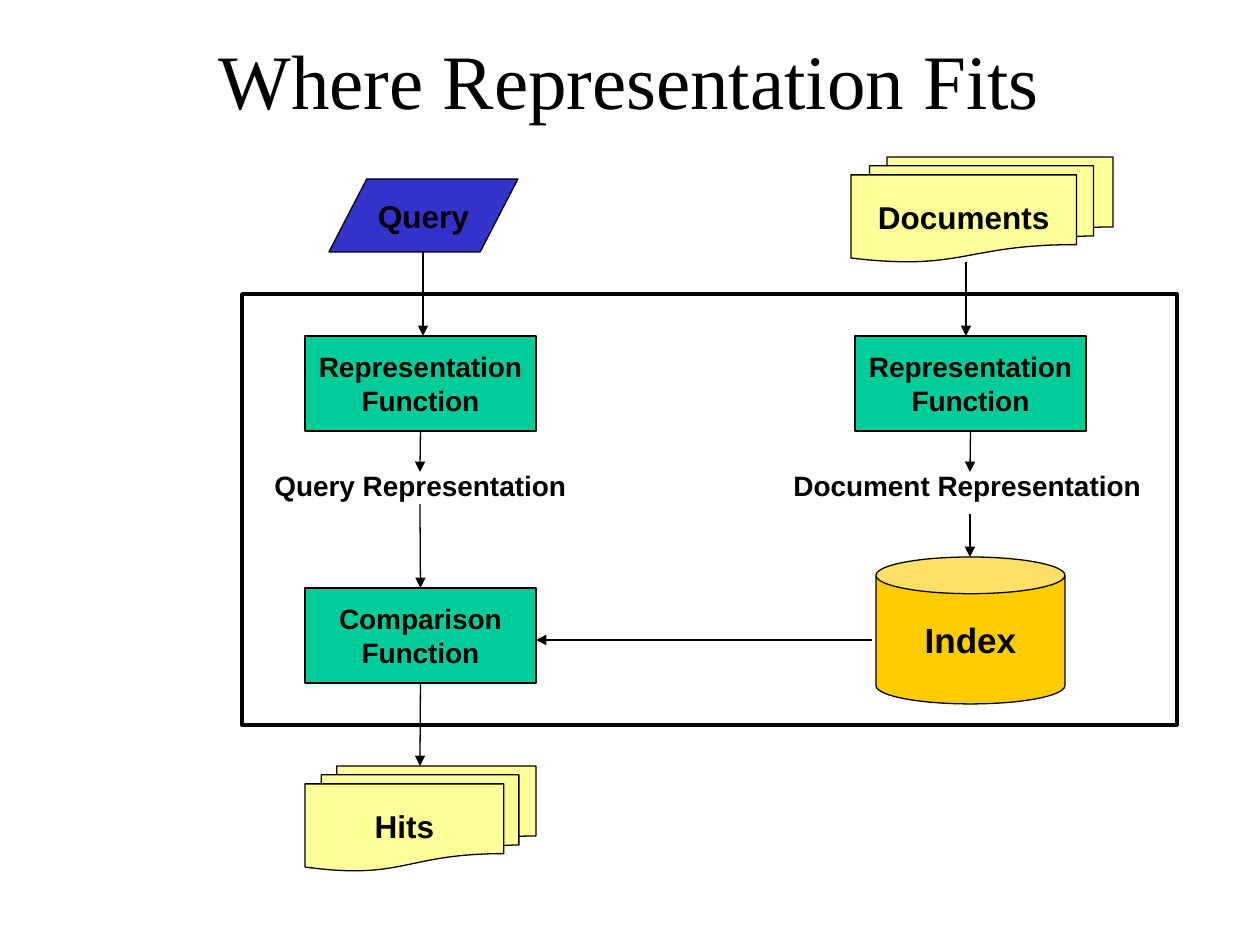
from dataclasses import dataclass

from lxml.etree import SubElement
from pptx import Presentation
from pptx.dml.color import RGBColor
from pptx.enum.shapes import MSO_CONNECTOR, MSO_SHAPE as Preset
from pptx.enum.text import MSO_ANCHOR as Anchor, MSO_AUTO_SIZE, PP_ALIGN as Align
from pptx.oxml.ns import qn
from pptx.util import Emu, Pt


@dataclass(frozen=True)
class Theme:
    ink: str = "000000"
    paper: str = "FFFF99"
    query: str = "3333CC"
    function: str = "00CC99"
    index: str = "FFCC00"
    title_font: str = "Times New Roman"
    body_font: str = "Arial"
    title_size: int = 44
    index_size: int = 20
    data_size: int = 18
    label_size: int = 16
    thin: float = 0.75
    thick: float = 2


THEME = Theme()
PX = 914400 / 126  # one px in EMU
TOP, BOTTOM = 0, 2  # connection sites of a rectangle

# Content: lengths in px
TITLE = ("Where Representation Fits", (94, 0, 1071, 158))
FRAME = (242, 294, 935, 431)
FUNCTION_SIZE = (231, 95)

# name: (text, preset, box, fill, type size)
DATA_SHAPES = {
    "documents": ("Documents", Preset.FLOWCHART_MULTIDOCUMENT, (851, 157, 262, 105),
                  THEME.paper, THEME.data_size),
    "query": ("Query", Preset.FLOWCHART_DATA, (329, 179, 189, 73),
              THEME.query, THEME.data_size),
    "hits": ("Hits", Preset.FLOWCHART_MULTIDOCUMENT, (305, 766, 231, 105),
             THEME.paper, THEME.data_size),
    "index": ("Index", Preset.CAN, (876, 557, 189, 147),
              THEME.index, THEME.index_size),
}
# name: (text, left, top)
FUNCTIONS = {
    "query function": ("Representation\nFunction", 305, 336),
    "document function": ("Representation\nFunction", 855, 336),
    "comparison": ("Comparison\nFunction", 305, 588),
}
LABELS = [
    ("Query Representation", (262, 462, 317, 47)),
    ("Document Representation", (781, 462, 374, 47)),
]
# (from, to, joined start, joined end)
ARROWS = [
    ((420, 431), (420, 472), ("query function", BOTTOM), None),
    ((970, 431), (970, 472), ("document function", BOTTOM), None),
    ((970, 514), (970, 557), None, None),
    ((423, 252), (423, 336), None, None),
    ((966, 262), (966, 336), None, None),
    ((872, 640), (536, 640), None, None),
    ((420, 683), (420, 766), ("comparison", BOTTOM), None),
    ((420, 504), (420, 588), None, ("comparison", TOP)),
]


def emu(*lengths):
    return [Emu(round(length * PX)) for length in lengths]


def write(shape, text, *, size, font=THEME.body_font, bold=True,
          align=Align.CENTER, anchor=Anchor.MIDDLE, wrap=False):
    frame = shape.text_frame
    frame.text = text
    frame.word_wrap = wrap
    frame.vertical_anchor = anchor
    for paragraph in frame.paragraphs:
        paragraph.alignment = align
        paragraph.font.name = font
        paragraph.font.size = Pt(size)
        paragraph.font.bold = bold
        paragraph.font.color.rgb = RGBColor.from_string(THEME.ink)


def draw_line(line, width):
    line.color.rgb = RGBColor.from_string(THEME.ink)
    line.width = Pt(width)


def add_shape(slide, preset, box, fill=None, width=THEME.thin):
    shape = slide.shapes.add_shape(preset, *emu(*box))
    shape.shadow.inherit = False
    if fill:
        shape.fill.solid()
        shape.fill.fore_color.rgb = RGBColor.from_string(fill)
    else:
        shape.fill.background()
    draw_line(shape.line, width)
    return shape


def add_arrow(slide, start, end, begin_site, end_site, parts):
    arrow = slide.shapes.add_connector(MSO_CONNECTOR.STRAIGHT, *emu(*start, *end))
    draw_line(arrow.line, THEME.thin)
    properties = arrow.element.spPr
    SubElement(arrow.line._get_or_add_ln(), qn("a:tailEnd"), type="triangle")
    SubElement(properties, qn("a:effectLst"))
    if begin_site:
        name, site = begin_site
        arrow.begin_connect(parts[name], site)
    if end_site:
        name, site = end_site
        arrow.end_connect(parts[name], site)


def main():
    presentation = Presentation()
    presentation.slide_width, presentation.slide_height = emu(1260, 945)
    slide = presentation.slides.add_slide(presentation.slide_layouts[5])

    # Title
    text, box = TITLE
    title = slide.shapes.title
    title.left, title.top, title.width, title.height = emu(*box)
    write(title, text, size=THEME.title_size, font=THEME.title_font,
          bold=False, wrap=True)

    # Data and function shapes
    parts = {}
    for name, (text, preset, box, fill, size) in DATA_SHAPES.items():
        parts[name] = add_shape(slide, preset, box, fill)
        write(parts[name], text, size=size)
    for name, (text, left, top) in FUNCTIONS.items():
        box = (left, top, *FUNCTION_SIZE)
        parts[name] = add_shape(slide, Preset.RECTANGLE, box, THEME.function)
        write(parts[name], text, size=THEME.label_size)

    # Labels between the steps
    for text, box in LABELS:
        label = slide.shapes.add_textbox(*emu(*box))
        write(label, text, size=THEME.label_size, align=Align.LEFT, anchor=Anchor.TOP)
        label.text_frame.auto_size = MSO_AUTO_SIZE.SHAPE_TO_FIT_TEXT

    # Arrows and the system frame
    for arrow in ARROWS:
        add_arrow(slide, *arrow, parts)
    add_shape(slide, Preset.RECTANGLE, FRAME, width=THEME.thick)

    presentation.save("out.pptx")


if __name__ == "__main__":
    main()
